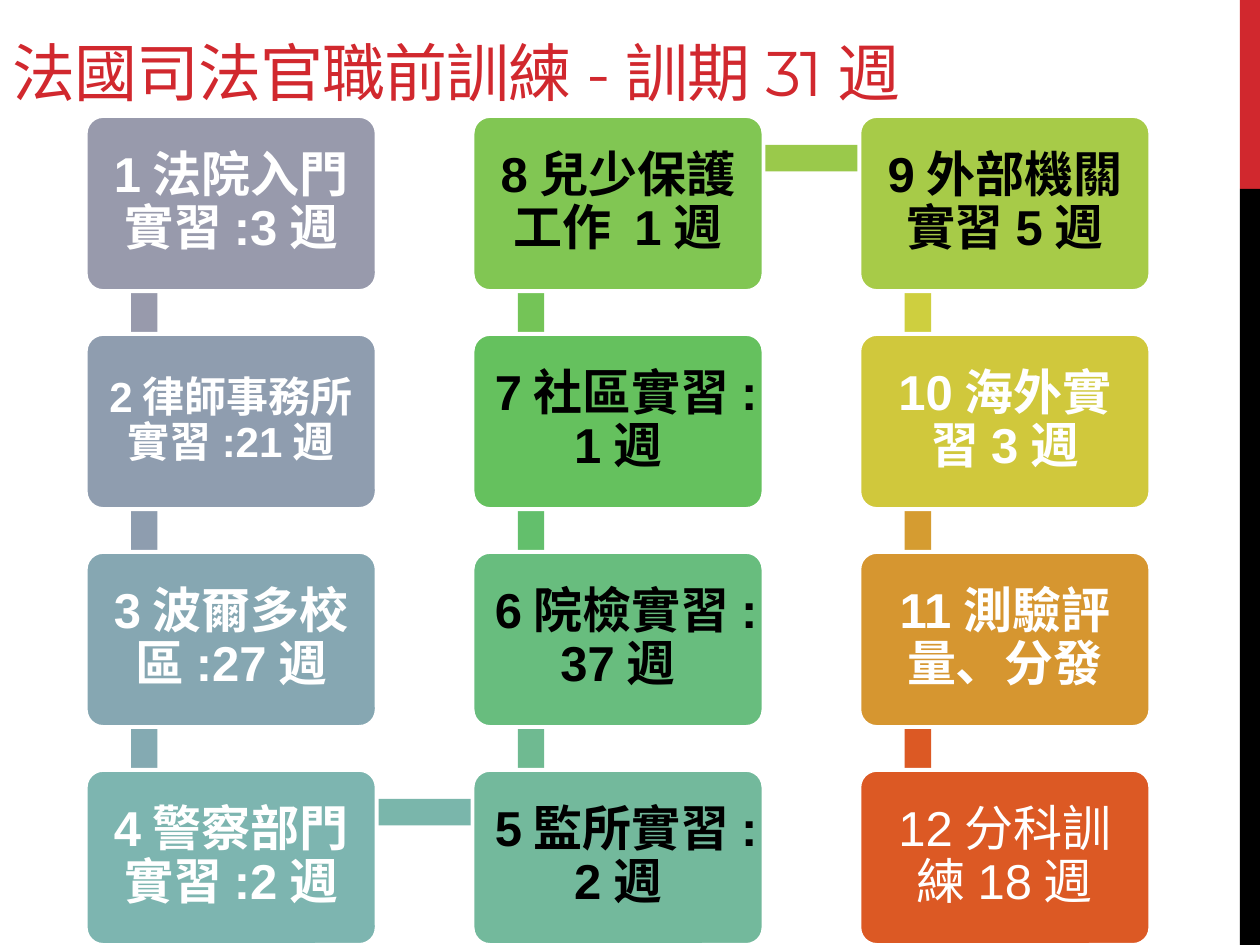
from pptx import Presentation
from pptx.dml.color import RGBColor
from pptx.enum.shapes import MSO_SHAPE
from pptx.enum.text import MSO_ANCHOR, PP_ALIGN
from pptx.util import Inches, Pt

RED = RGBColor(0xD1, 0x28, 0x2E)
BLACK = RGBColor(0, 0, 0)
WHITE = RGBColor(0xFF, 0xFF, 0xFF)

ROWS = 4
BOX_W, BOX_H = 2.31, 1.39
COLUMN_STEP, ROW_STEP = 3.07, 1.73
BAR = 0.21

STEPS = [
    ("1法院入門實習:3週", "989AAC", "989AAC", WHITE),
    ("2律師事務所實習:21週", "8F9DAF", "8E9DAF", WHITE),
    ("3波爾多校區:27週", "86A7B2", "84AAB2", WHITE),
    ("4警察部門實習:2週", "7DB5B0", "7AB6AB", WHITE),
    ("5監所實習:2週", "73B99C", "6FBA91", BLACK),
    ("6院檢實習:37週", "68BD7E", "63BF6C", BLACK),
    ("7社區實習:1週", "65C15E", "74C457", BLACK),
    ("8兒少保護工作 1週", "81C653", "9AC94B", BLACK),
    ("9外部機關實習5週", "A7CB48", "CECF3F", BLACK),
    ("10海外實習3週", "D0C83C", "D59C31", WHITE),
    ("11測驗評量、分發", "D69630", "DC5924", WHITE),
    ("12分科訓練18週", "DC5924", None, WHITE),
]
SMALL_STEP, PLAIN_STEP = 1, 11


def add_block(slide, kind, left, top, width, height, color):
    block = slide.shapes.add_shape(
        kind, Inches(left), Inches(top), Inches(width), Inches(height))
    block.shadow.inherit = False
    block.fill.solid()
    block.fill.fore_color.rgb = color
    block.line.fill.background()
    return block


def format_text(frame, text, margin, frame_format, paragraph_format, font_format, color):
    frame.text = text
    margins = {f"margin_{side}": Inches(margin) for side in ("left", "top", "right", "bottom")}
    paragraph = frame.paragraphs[0]
    font = paragraph.runs[0].font
    for target, values in ((frame, {"word_wrap": True, **margins, **frame_format}),
                           (paragraph, paragraph_format), (font, font_format)):
        for name, value in values.items():
            setattr(target, name, value)
    font.color.rgb = color


def add_side_band(slide, left, top, width, height):
    red_height = height / 5
    add_block(slide, MSO_SHAPE.RECTANGLE, left, top, width, red_height, RED)
    add_block(slide, MSO_SHAPE.RECTANGLE, left, top + red_height,
              width, height - red_height, BLACK)


def place_title(slide, left, top, width, height):
    title = slide.shapes.title
    title.left, title.top = Inches(left), Inches(top)
    title.width, title.height = Inches(width), Inches(height)
    format_text(title.text_frame, "法國司法官職前訓練-訓期31週", 0.1,
                {"vertical_anchor": MSO_ANCHOR.BOTTOM, "margin_bottom": Inches(0.05)},
                {"alignment": PP_ALIGN.LEFT},
                {"size": Pt(36), "name": "Montserrat"}, RED)
    title.text_frame.paragraphs[0].runs[0].font._element.set("spc", "-60")


def add_step(slide, left, top, text, fill, text_color, size, bold):
    box = add_block(slide, MSO_SHAPE.ROUNDED_RECTANGLE, left, top, BOX_W, BOX_H, fill)
    box.adjustments[0] = 0.1
    box.line.color.rgb = WHITE
    box.line.width = Pt(2.25)
    format_text(box.text_frame, text, size / 240,
                {"vertical_anchor": MSO_ANCHOR.MIDDLE},
                {"alignment": PP_ALIGN.CENTER, "line_spacing": 0.9},
                {"size": Pt(size), "name": "Arial", "bold": bold}, text_color)


def add_snake(slide, left, top):
    for index, (text, fill, bar_fill, text_color) in enumerate(STEPS):
        column, position = divmod(index, ROWS)
        upward = column % 2 == 1
        row = ROWS - 1 - position if upward else position
        x, y = left + column * COLUMN_STEP, top + row * ROW_STEP
        if bar_fill:
            if position == ROWS - 1:
                bar = (x + 0.47, y + 0.23, COLUMN_STEP, BAR)
            else:
                upper = y - ROW_STEP if upward else y
                bar = (x + 0.36, upper + 0.34, BAR, ROW_STEP)
            add_block(slide, MSO_SHAPE.RECTANGLE, *bar, RGBColor.from_string(bar_fill))
        add_step(slide, x, y, text, RGBColor.from_string(fill), text_color,
                 24 if index == SMALL_STEP else 28, index != PLAIN_STEP)


def main():
    deck = Presentation()
    deck.slide_width, deck.slide_height = Inches(10), Inches(7.5)
    slide = deck.slides.add_slide(deck.slide_layouts[5])
    add_side_band(slide, 9.84, 0, 0.16, 7.5)
    place_title(slide, 0, 0, 9.8, 0.92)
    add_snake(slide, 0.68, 0.92)
    deck.save("out.pptx")


if __name__ == "__main__":
    main()
